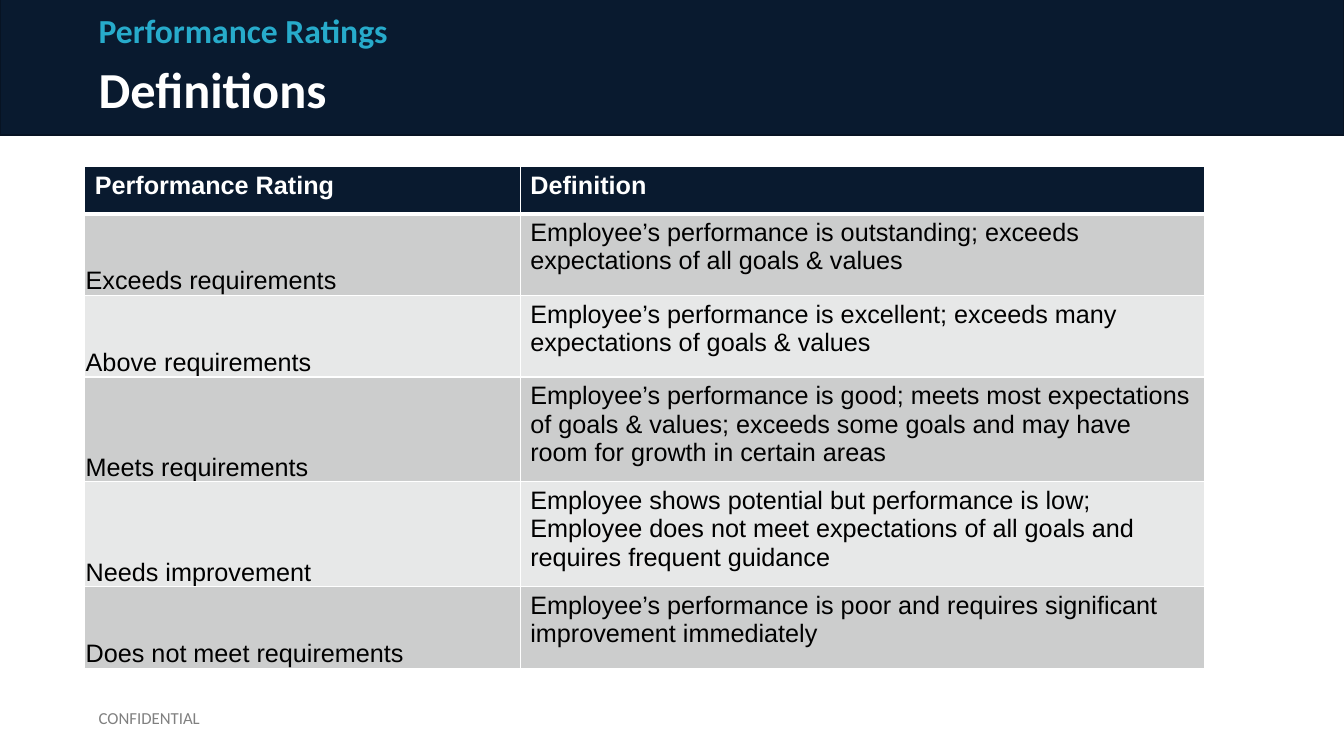
import lxml.etree
import pptx
import pptx.dml.color
import pptx.enum.shapes
import pptx.enum.text
import pptx.oxml.ns
import pptx.util

PX = 9144  # EMU, 100 px to the inch
NAVY = pptx.dml.color.RGBColor(0x09, 0x1A, 0x2F)
NAVY_EDGE = pptx.dml.color.RGBColor(0x07, 0x13, 0x23)
TEAL = pptx.dml.color.RGBColor(0x27, 0xAB, 0xCB)
GRAY = pptx.dml.color.RGBColor(0x80, 0x80, 0x80)
BAND_DARK = pptx.dml.color.RGBColor(0xCC, 0xCD, 0xCD)
BAND_LIGHT = pptx.dml.color.RGBColor(0xE7, 0xE8, 0xE8)
WHITE = pptx.dml.color.RGBColor(0xFF, 0xFF, 0xFF)
BLACK = pptx.dml.color.RGBColor(0, 0, 0)
ANCHOR = pptx.enum.text.MSO_ANCHOR


def write_text(frame, text, name, size, color, bold):
    frame.word_wrap = True
    paragraph = frame.paragraphs[0]
    run = paragraph.add_run()
    run.text = text
    font_values = {"name": name, "size": pptx.util.Pt(size), "bold": bold}
    for key, value in font_values.items():
        setattr(run.font, key, value)
    run.font.color.rgb = color
    return paragraph


def add_border(cell, side, points):
    """Draw a white line on one side of a cell; call before filling the cell."""
    properties = cell._tc.get_or_add_tcPr()
    line = lxml.etree.SubElement(
        properties, pptx.oxml.ns.qn(f"a:ln{side}"), w=str(pptx.util.Pt(points)))
    fill = lxml.etree.SubElement(line, pptx.oxml.ns.qn("a:solidFill"))
    lxml.etree.SubElement(fill, pptx.oxml.ns.qn("a:srgbClr"), val=str(WHITE))


presentation = pptx.Presentation()
presentation.slide_width = 1333 * PX
presentation.slide_height = 750 * PX
slide = presentation.slides.add_slide(presentation.slide_layouts[6])

# Header band
band = slide.shapes.add_shape(
    pptx.enum.shapes.MSO_SHAPE.RECTANGLE, 0, -1 * PX, 1333 * PX, 135 * PX)
band.shadow.inherit = False
band.fill.solid()
band.fill.fore_color.rgb = NAVY
band.line.color.rgb = NAVY_EDGE
band.line.width = pptx.util.Pt(1)

# Title, section name and footer: text, top, width, height, anchor, size, color, bold, spacing
labels = [
    ("Definitions", 53, 1212, 80, ANCHOR.MIDDLE, 36, WHITE, True, 0.8),
    ("Performance Ratings", 7, 1212, 48, ANCHOR.BOTTOM, 24, TEAL, True, 0.9),
    ("CONFIDENTIAL", 692, 450, 40, ANCHOR.MIDDLE, 12, GRAY, False, 1.0),
]
for text, top, width, height, anchor, size, color, bold, spacing in labels:
    box = slide.shapes.add_textbox(88 * PX, top * PX, width * PX, height * PX)
    box.text_frame.vertical_anchor = anchor
    paragraph = write_text(box.text_frame, text, "Calibri", size, color, bold)
    paragraph.line_spacing = spacing

# Ratings table
ratings = [
    ("Performance Rating", "Definition"),
    ("Exceeds requirements",
     "Employee’s performance is outstanding; exceeds expectations of all goals & values"),
    ("Above requirements",
     "Employee’s performance is excellent; exceeds many expectations of goals & values"),
    ("Meets requirements",
     "Employee’s performance is good; meets most expectations of goals & values; "
     "exceeds some goals and may have room for growth in certain areas"),
    ("Needs improvement",
     "Employee shows potential but performance is low; Employee does not meet "
     "expectations of all goals and requires frequent guidance"),
    ("Does not meet requirements",
     "Employee’s performance is poor and requires significant improvement immediately"),
]
column_widths = [432, 679]
row_heights = [47, 81, 81, 104, 104, 81]
rating_margins = {"margin_left": PX, "margin_right": PX, "margin_top": PX, "margin_bottom": 0}

table = slide.shapes.add_table(
    len(ratings), len(column_widths), 84 * PX, 165 * PX,
    sum(column_widths) * PX, sum(row_heights) * PX).table
for column, width in zip(table.columns, column_widths):
    column.width = width * PX

for row_index, (texts, height) in enumerate(zip(ratings, row_heights)):
    table.rows[row_index].height = height * PX
    is_header = row_index == 0
    fill_color = NAVY if is_header else BAND_DARK if row_index % 2 else BAND_LIGHT
    for column_index, text in enumerate(texts):
        cell = table.cell(row_index, column_index)
        for side in "LRTB":
            thick = (is_header and side == "B") or (row_index == 1 and side == "T")
            add_border(cell, side, 3 if thick else 1)
        cell.fill.solid()
        cell.fill.fore_color.rgb = fill_color
        if column_index == 0 and not is_header:
            cell.vertical_anchor = ANCHOR.BOTTOM
            for key, value in rating_margins.items():
                setattr(cell, key, value)
        write_text(cell.text_frame, text, "Arial", 18, WHITE if is_header else BLACK, is_header)

presentation.save("out.pptx")
